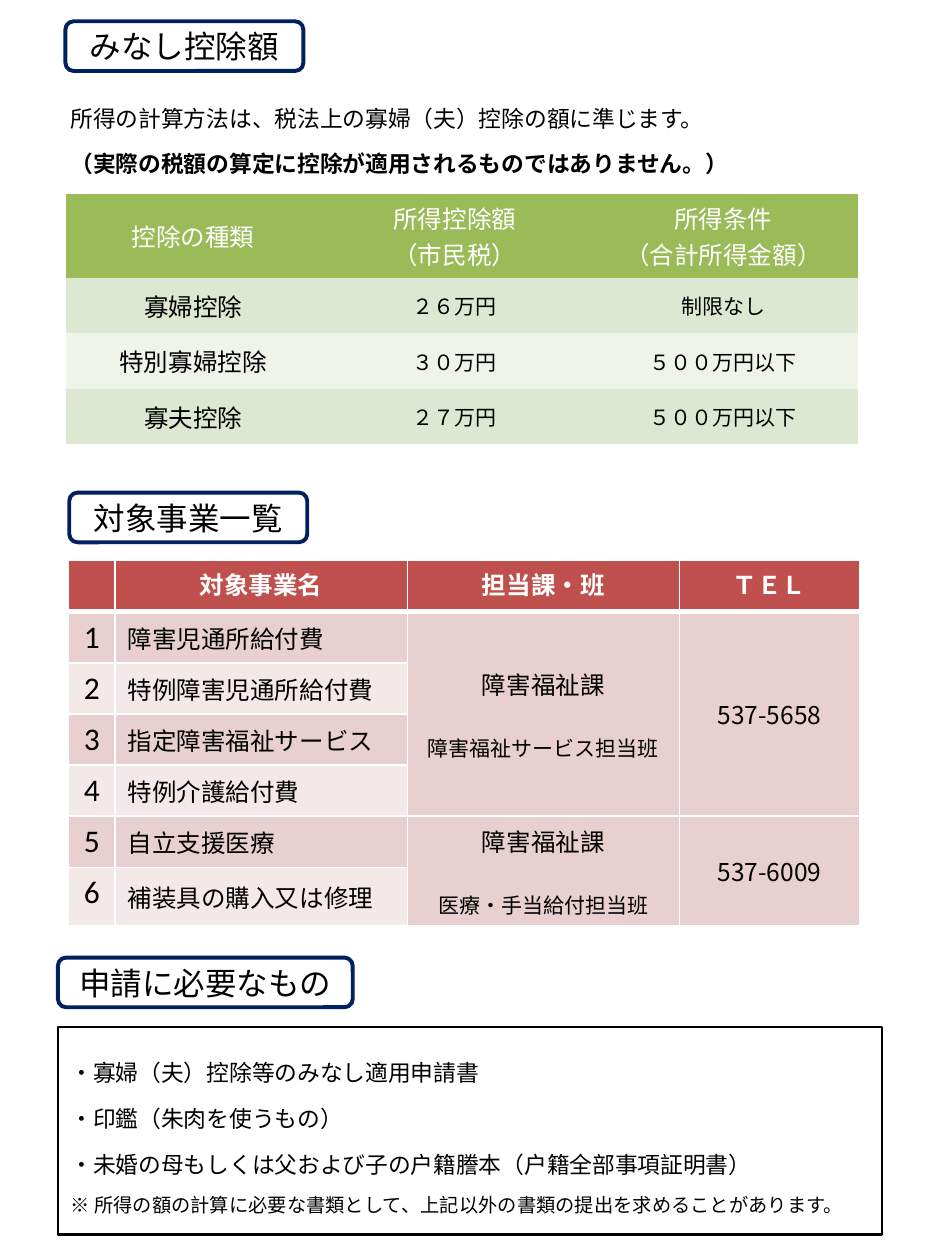
from lxml.etree import SubElement
from pptx import Presentation
from pptx.dml.color import RGBColor
from pptx.enum.shapes import MSO_SHAPE
from pptx.enum.text import MSO_ANCHOR, MSO_AUTO_SIZE, PP_ALIGN
from pptx.oxml.ns import qn
from pptx.util import Pt

# Content
HEADS = [  # text, left, top, width
    ("みなし控除額", 37.4, 12.2, 136),
    ("対象事業一覧", 39.6, 281.5, 136),
    ("申請に必要なもの", 33.1, 547.2, 168.5),
]
INTRO = [
    "所得の計算方法は、税法上の寡婦（夫）控除の額に準じます。",
    "（実際の税額の算定に控除が適用されるものではありません。）",
]
NEEDS = [
    "・寡婦（夫）控除等のみなし適用申請書",
    "・印鑑（朱肉を使うもの）",
    "・未婚の母もしくは父および子の戸籍謄本（戸籍全部事項証明書）",
    "※ 所得の額の計算に必要な書類として、上記以外の書類の提出を求めることがあります。",
]
RATES = [
    ("控除の種類", "所得控除額\n（市民税）", "所得条件\n（合計所得金額）"),
    ("寡婦控除", "２６万円", "制限なし"),
    ("特別寡婦控除", "３０万円", "５００万円以下"),
    ("寡夫控除", "２７万円", "５００万円以下"),
]
TITLES = ("", "対象事業名", "担当課・班", "ＴＥＬ")
WORKS = [
    "障害児通所給付費", "特例障害児通所給付費", "指定障害福祉サービス",
    "特例介護給付費", "自立支援医療", "補装具の購入又は修理",
]
DESKS = [  # first row, last row, section, team, phone
    (1, 4, "障害福祉課", "障害福祉サービス担当班", "537-5658"),
    (5, 6, "障害福祉課", "医療・手当給付担当班", "537-6009"),
]

# Theme
THEME = {
    "font": "Noto Sans CJK JP", "latin": "Calibri",
    "ink": "000000", "white": "FFFFFF", "navy": "002060",
    "green": ("9BBB59", "DEE7D1", "EFF3EA"),
    "red": ("C0504D", "E8D0D0", "F4E9E9"),
    "head": 18, "body": 13, "cell": 14, "small": 12, "note": 11,
}
PLAIN = "{2D5ABB26-0587-4C30-8999-92F81FD0307C}"
MID, CENTER, LEFT = MSO_ANCHOR.MIDDLE, PP_ALIGN.CENTER, PP_ALIGN.LEFT


def apply(obj, **vals):
    for key, val in vals.items():
        setattr(obj, key, val)


def place(shape, left, top, width, height):
    apply(shape, left=Pt(left), top=Pt(top), width=Pt(width), height=Pt(height))


def write(para, text, size, color="ink", font="font", bold=False, **form):
    apply(para, **form)
    run = para.add_run()
    run.text = text
    apply(run.font, name=THEME[font], size=Pt(size), bold=bold)
    run.font.color.rgb = RGBColor.from_string(THEME[color])
    SubElement(run.font._element, qn("a:ea"), typeface=THEME[font])


def edge(shape, color, width):
    shape.line.color.rgb = RGBColor.from_string(THEME[color])
    shape.line.width = Pt(width)


def paint(cell, color):
    cell.fill.solid()
    cell.fill.fore_color.rgb = RGBColor.from_string(color)


def fill_list(shape, lines, anchor):
    frame = shape.text_frame
    apply(frame, word_wrap=True, auto_size=MSO_AUTO_SIZE.NONE,
          vertical_anchor=anchor)
    for num, (text, size, bold) in enumerate(lines):
        para = frame.add_paragraph() if num else frame.paragraphs[0]
        props = para._p.get_or_add_pPr()
        props.set("marL", "0")
        props.set("indent", "0")
        SubElement(props, qn("a:buNone"))
        write(para, text, size, bold=bold, line_spacing=1.5,
              space_before=Pt(size * 0.2 if num else 0), alignment=LEFT)


def fill_cell(cell, text, size, **form):
    cell.vertical_anchor = MID
    for num, part in enumerate(text.split("\n")):
        frame = cell.text_frame
        para = frame.add_paragraph() if num else frame.paragraphs[0]
        write(para, part, size, **{"alignment": CENTER, **form})


def border(cell, top, bottom):
    props = cell._tc.get_or_add_tcPr()
    sides = (("lnL", 1), ("lnR", 1), ("lnT", top), ("lnB", bottom))
    for spot, (tag, width) in enumerate(sides):
        line = SubElement(props, qn("a:" + tag), w=str(Pt(width)))
        solid = SubElement(line, qn("a:solidFill"))
        SubElement(solid, qn("a:srgbClr"), val=THEME["white"])
        props.insert(spot, line)


def grid(slide, left, top, cols, rows):
    table = slide.shapes.add_table(
        len(rows), len(cols), Pt(left), Pt(top), Pt(sum(cols)), Pt(sum(rows))
    ).table
    table._tbl.tblPr.find(qn("a:tableStyleId")).text = PLAIN
    for col, width in zip(table.columns, cols):
        col.width = Pt(width)
    for row, height in zip(table.rows, rows):
        row.height = Pt(height)
    return table


def shade(row, tones):
    return tones[0] if row == 0 else tones[1 if row % 2 else 2]


def main():
    deck = Presentation()
    apply(deck, slide_width=Pt(540), slide_height=Pt(720))
    slide = deck.slides.add_slide(deck.slide_layouts[3])
    title, intro, needs = list(slide.placeholders)[:3]

    # Framed headings; the first holds the slide title
    for num, (text, left, top, width) in enumerate(HEADS):
        frame = slide.shapes.add_shape(
            MSO_SHAPE.ROUNDED_RECTANGLE, Pt(left), Pt(top), Pt(width), Pt(28.4))
        frame.shadow.inherit = False
        frame.fill.background()
        edge(frame, "navy", 2.25)
        box = frame if num else title
        place(box, left, top, width, 28.4)
        apply(box.text_frame, word_wrap=True, vertical_anchor=MID,
              auto_size=MSO_AUTO_SIZE.NONE)
        write(box.text_frame.paragraphs[0], text, THEME["head"],
              alignment=CENTER)

    # Intro and list of papers
    body = THEME["body"]
    place(intro, 33.1, 48.2, 471, 62.6)
    fill_list(intro, [(t, body, n == 1) for n, t in enumerate(INTRO)],
              MSO_ANCHOR.TOP)
    place(needs, 33.1, 586.8, 471, 118.8)
    edge(needs, "ink", 1.5)
    fill_list(needs, [(t, THEME["note"] if t[0] == "※" else body, False)
                      for t in NEEDS], MID)

    # Deduction table
    rates = grid(slide, 37.6, 110.6, [145.6, 153.5, 153.5], [48] + [31.8] * 3)
    for r, row in enumerate(RATES):
        for c, text in enumerate(row):
            cell = rates.cell(r, c)
            paint(cell, shade(r, THEME["green"]))
            fill_cell(cell, text, THEME["small" if r and c else "cell"],
                      color="ink" if r else "white")

    # Services table
    works = grid(slide, 39.2, 320.4, [26.6, 167, 155.5, 103],
                 [29.2] * 6 + [33])
    for r in range(7):
        for c in range(4):
            cell = works.cell(r, c)
            paint(cell, shade(r if c < 2 else min(r, 1), THEME["red"]))
            border(cell, 3 if r == 1 else 1, 1 if r else 3)
    for c, text in enumerate(TITLES):
        if text:
            fill_cell(works.cell(0, c), text, THEME["cell"], color="white",
                      font="latin", bold=True)
    for r, text in enumerate(WORKS, 1):
        fill_cell(works.cell(r, 0), str(r), THEME["head"], font="latin")
        works.cell(r, 0).vertical_anchor = MSO_ANCHOR.TOP
        fill_cell(works.cell(r, 1), text, THEME["cell"], alignment=LEFT)
    for first, last, part, team, phone in DESKS:
        for c in (2, 3):
            works.cell(first, c).merge(works.cell(last, c))
        desk = works.cell(first, 2)
        fill_cell(desk, part, THEME["cell"])
        write(desk.text_frame.add_paragraph(), team, THEME["small"],
              alignment=CENTER, space_before=Pt(17.4))
        fill_cell(works.cell(first, 3), phone, THEME["cell"])

    deck.save("out.pptx")


if __name__ == "__main__":
    main()
